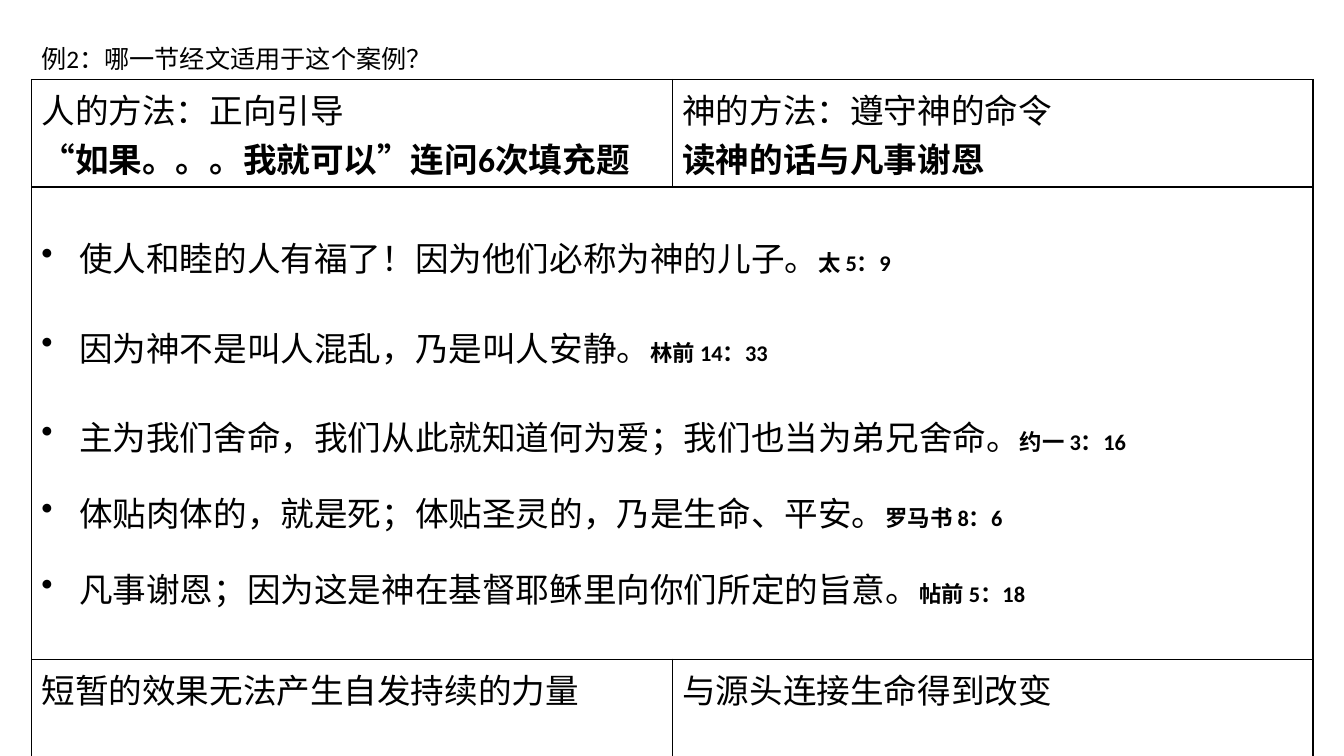
from dataclasses import dataclass

import pptx
import pptx.dml.color
import pptx.enum.text
import pptx.oxml.ns
import pptx.util
from lxml import etree

Cm = pptx.util.Cm
Pt = pptx.util.Pt
BLACK = pptx.dml.color.RGBColor(0x00, 0x00, 0x00)
WHITE = pptx.dml.color.RGBColor(0xFF, 0xFF, 0xFF)
FONT = "Calibri"
BODY_SIZE = 24
REFERENCE_SIZE = 16
BULLET_INDENT = Cm(0.95)
WIDE_GAP, NARROW_GAP = 29, 19.5


@dataclass(frozen=True)
class Verse:
    words: str
    reference: str
    gap: float


@dataclass(frozen=True)
class Method:
    heading: str
    practice: str
    outcome: str


QUESTION = "例2：哪一节经文适用于这个案例？"
METHODS = [
    Method("人的方法：正向引导", "“如果。。。我就可以”连问6次填充题", "短暂的效果无法产生自发持续的力量"),
    Method("神的方法：遵守神的命令", "读神的话与凡事谢恩", "与源头连接生命得到改变"),
]
VERSES = [
    Verse("使人和睦的人有福了！因为他们必称为神的儿子。", "太 5：9", 0),
    Verse("因为神不是叫人混乱，乃是叫人安静。", "林前 14：33", WIDE_GAP),
    Verse("主为我们舍命，我们从此就知道何为爱；我们也当为弟兄舍命。", "约一 3：16", WIDE_GAP),
    Verse("体贴肉体的，就是死；体贴圣灵的，乃是生命、平安。", "罗马书 8：6", NARROW_GAP),
    Verse("凡事谢恩；因为这是神在基督耶稣里向你们所定的旨意。", "帖前 5：18", NARROW_GAP),
]


def style_run(run: pptx.text.text._Run, size: float, bold: bool = False) -> None:
    run.font.name = FONT
    run.font.size = Pt(size)
    run.font.bold = bold
    run.font.color.rgb = BLACK


def add_bullet(paragraph: pptx.text.text._Paragraph) -> None:
    properties = paragraph._p.get_or_add_pPr()
    properties.set("marL", str(BULLET_INDENT))
    properties.set("indent", str(-BULLET_INDENT))
    etree.SubElement(properties, pptx.oxml.ns.qn("a:buChar"), char="•")


def frame_cell(cell: pptx.table._Cell) -> None:
    """Fill the cell white and rule all four sides in black."""
    cell.fill.solid()
    cell.fill.fore_color.rgb = WHITE
    qn = pptx.oxml.ns.qn
    properties = cell._tc.get_or_add_tcPr()
    for position, side in enumerate(("lnL", "lnR", "lnT", "lnB")):
        line = etree.Element(qn(f"a:{side}"), w=str(Pt(1)))
        fill = etree.SubElement(line, qn("a:solidFill"))
        etree.SubElement(fill, qn("a:srgbClr"), val=str(BLACK))
        properties.insert(position, line)


def write_method(header: pptx.table._Cell, footer: pptx.table._Cell, method: Method) -> None:
    header.text_frame.text = f"{method.heading}\n{method.practice}"
    heading, practice = header.text_frame.paragraphs
    style_run(heading.runs[0], BODY_SIZE)
    style_run(practice.runs[0], BODY_SIZE, bold=True)
    footer.text_frame.text = method.outcome
    style_run(footer.text_frame.paragraphs[0].runs[0], BODY_SIZE)


def write_verses(cell: pptx.table._Cell) -> None:
    cell.margin_top = Cm(1.16)
    cell.text_frame.text = "\n".join(verse.words for verse in VERSES)
    for paragraph, verse in zip(cell.text_frame.paragraphs, VERSES):
        style_run(paragraph.runs[0], BODY_SIZE)
        reference = paragraph.add_run()
        reference.text = verse.reference
        style_run(reference, REFERENCE_SIZE, bold=True)
        paragraph.space_before = Pt(verse.gap)
        add_bullet(paragraph)


def add_comparison(slide: pptx.slide.Slide) -> None:
    frame = slide.shapes.add_table(3, 2, Cm(0.79), Cm(2), Cm(32.3), Cm(17.3))
    comparison = frame.table
    comparison.first_row = False
    comparison.horz_banding = False
    for row, height in zip(comparison.rows, (2.71, 11.9, 2.69)):
        row.height = Cm(height)
    for cell in comparison.iter_cells():
        frame_cell(cell)
    for column, method in enumerate(METHODS):
        write_method(comparison.cell(0, column), comparison.cell(2, column), method)
    verses = comparison.cell(1, 0)
    verses.merge(comparison.cell(1, 1))
    write_verses(verses)


def add_question(slide: pptx.slide.Slide) -> None:
    question = slide.shapes.add_textbox(Cm(0.79), Cm(0.97), Cm(10.46), Cm(1.03)).text_frame
    question.word_wrap = False
    question.auto_size = pptx.enum.text.MSO_AUTO_SIZE.SHAPE_TO_FIT_TEXT
    question.text = QUESTION
    style_run(question.paragraphs[0].runs[0], 18)


def main() -> None:
    presentation = pptx.Presentation()
    presentation.slide_width = Cm(33.87)
    presentation.slide_height = Cm(19.05)
    slide = presentation.slides.add_slide(presentation.slide_layouts[6])
    add_comparison(slide)
    add_question(slide)
    presentation.save("out.pptx")


if __name__ == "__main__":
    main()
